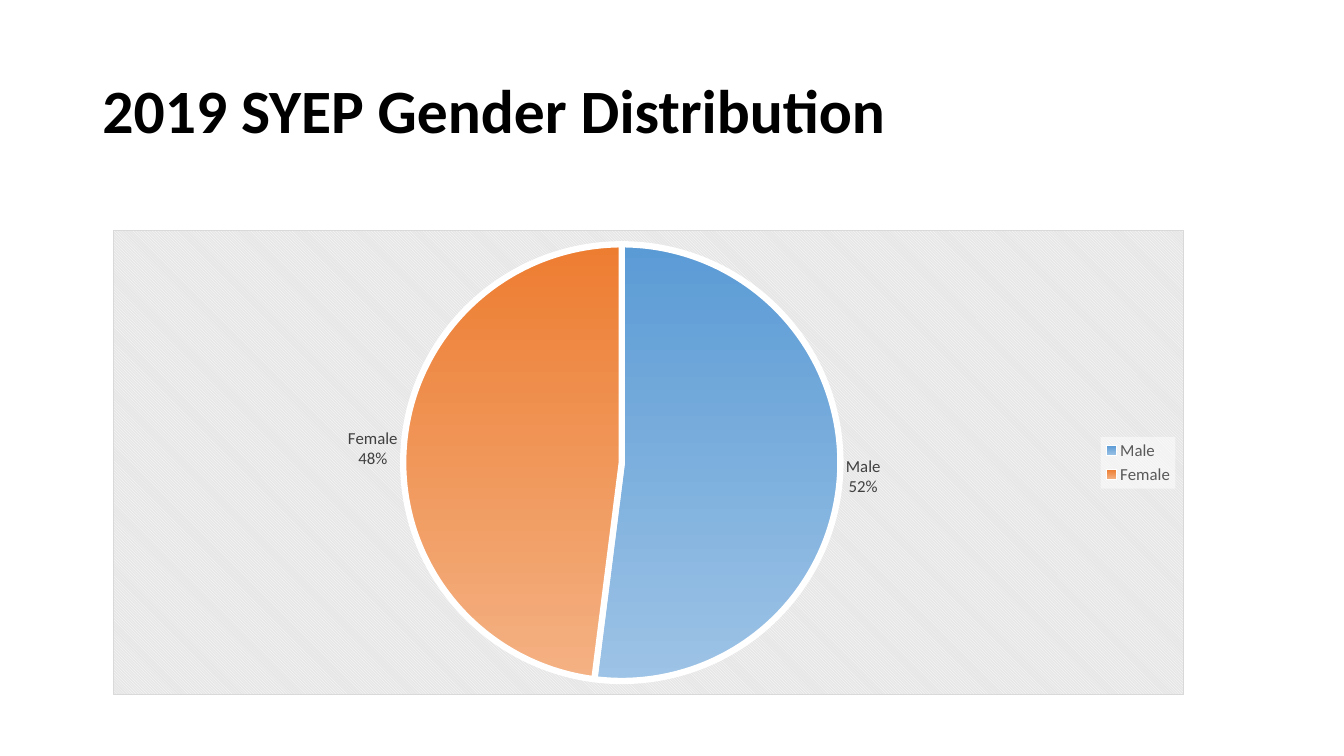
import pptx
import pptx.chart.data
import pptx.dml.color
import pptx.enum.chart
import pptx.enum.text
import pptx.oxml
import pptx.oxml.ns
import pptx.util

Pt = pptx.util.Pt
RGB = pptx.dml.color.RGBColor
qn = pptx.oxml.ns.qn

TITLE = "2019 SYEP Gender Distribution"
BLACK = RGB(0x00, 0x00, 0x00)
WHITE = RGB(0xFF, 0xFF, 0xFF)
LABEL_GREY = RGB(0x40, 0x40, 0x40)
LEGEND_GREY = RGB(0x59, 0x59, 0x59)
STRIPE_GREY = RGB(0xE6, 0xE6, 0xE6)
BORDER_GREY = RGB(0xD9, 0xD9, 0xD9)
# gender, percent, gradient top, gradient bottom
GENDERS = [
    ("Male", 52, RGB(0x5B, 0x9B, 0xD5), RGB(0x9D, 0xC3, 0xE6)),
    ("Female", 48, RGB(0xED, 0x7D, 0x31), RGB(0xF4, 0xB1, 0x83)),
]
FONT = "Calibri"
TITLE_BOX = (66, 28.8, 828, 104.4)
CHART_BOX = (80.6, 164.2, 765.4, 332.6)
PIE_AREA = {"x": 0.27, "y": 0.03, "w": 0.41, "h": 0.94}  # shares of the chart box


def set_font(font, size, color, bold=False):
    font.name = FONT
    font.size = Pt(size)
    font.bold = bold
    font.color.rgb = color


def add_after(element, tag, body):
    """Insert a chart-namespace element with the given inner XML after element."""
    element.addnext(pptx.oxml.parse_xml(
        f'<c:{tag} {pptx.oxml.ns.nsdecls("c", "a")}>{body}</c:{tag}>'))


def add_title(slide):
    title = slide.shapes.title
    title.left, title.top, title.width, title.height = map(Pt, TITLE_BOX)
    title.text_frame.text = TITLE
    title.text_frame.vertical_anchor = pptx.enum.text.MSO_ANCHOR.MIDDLE
    heading = title.text_frame.paragraphs[0]
    heading.alignment = pptx.enum.text.PP_ALIGN.LEFT
    heading.line_spacing = 0.9
    set_font(heading.font, 44, BLACK, bold=True)


def add_gender_pie(slide):
    data = pptx.chart.data.CategoryChartData()
    data.categories = [gender for gender, *_ in GENDERS]
    data.add_series("Series 1", [percent for _, percent, *_ in GENDERS])
    chart = slide.shapes.add_chart(
        pptx.enum.chart.XL_CHART_TYPE.PIE, *map(Pt, CHART_BOX), data).chart
    chart.has_title = False
    set_font(chart.font, 10, BLACK)

    pie = chart.plots[0]
    pie.vary_by_categories = True
    for index, (_, _, *gradient) in enumerate(GENDERS):
        slice_format = pie.series[0].points[index].format
        slice_format.fill.gradient()
        slice_format.fill.gradient_angle = 270
        for stop, color in zip(slice_format.fill.gradient_stops, gradient):
            stop.color.rgb = color
        slice_format.line.color.rgb = WHITE
        slice_format.line.width = Pt(4.5)

    labels = pie.series[0].data_labels
    labels.show_category_name = True
    labels.show_percentage = True
    labels.show_value = False
    labels.show_legend_key = False
    labels.position = pptx.enum.chart.XL_LABEL_POSITION.OUTSIDE_END
    set_font(labels.font, 12, LABEL_GREY)
    label_flags = labels.font  # keeps the text block ahead of the separator
    separator = pptx.oxml.parse_xml(
        f'<c:separator {pptx.oxml.ns.nsdecls("c")}>\n</c:separator>')
    chart.element.find(".//" + qn("c:ser")).find(
        qn("c:dLbls")).find(qn("c:showBubbleSize")).addnext(separator)

    chart.has_legend = True
    chart.legend.position = pptx.enum.chart.XL_LEGEND_POSITION.RIGHT
    chart.legend.include_in_layout = False
    set_font(chart.legend.font, 12, LEGEND_GREY)
    add_after(chart.element.find(".//" + qn("c:legend")).find(qn("c:overlay")), "spPr",
              f'<a:solidFill><a:srgbClr val="{WHITE}"><a:alpha val="50000"/>'
              '</a:srgbClr></a:solidFill>')

    plot_area = chart.element.find(".//" + qn("c:plotArea"))
    for layout in plot_area.findall(qn("c:layout")):
        plot_area.remove(layout)
    edges = "".join(f'<c:{key} val="{share}"/>' for key, share in PIE_AREA.items())
    plot_area.insert(0, pptx.oxml.parse_xml(
        f'<c:layout {pptx.oxml.ns.nsdecls("c")}><c:manualLayout>'
        '<c:layoutTarget val="inner"/><c:xMode val="edge"/><c:yMode val="edge"/>'
        f'{edges}</c:manualLayout></c:layout>'))

    add_after(chart.element.find(qn("c:chart")), "spPr",
              '<a:pattFill prst="dkDnDiag">'
              f'<a:fgClr><a:srgbClr val="{WHITE}"/></a:fgClr>'
              f'<a:bgClr><a:srgbClr val="{STRIPE_GREY}"/></a:bgClr></a:pattFill>'
              f'<a:ln w="{Pt(0.75)}"><a:solidFill><a:srgbClr val="{BORDER_GREY}"/>'
              '</a:solidFill></a:ln>')


def main():
    deck = pptx.Presentation()
    deck.slide_width, deck.slide_height = Pt(960), Pt(540)
    slide = deck.slides.add_slide(deck.slide_layouts[5])
    add_title(slide)
    add_gender_pie(slide)
    deck.save("out.pptx")


if __name__ == "__main__":
    main()
